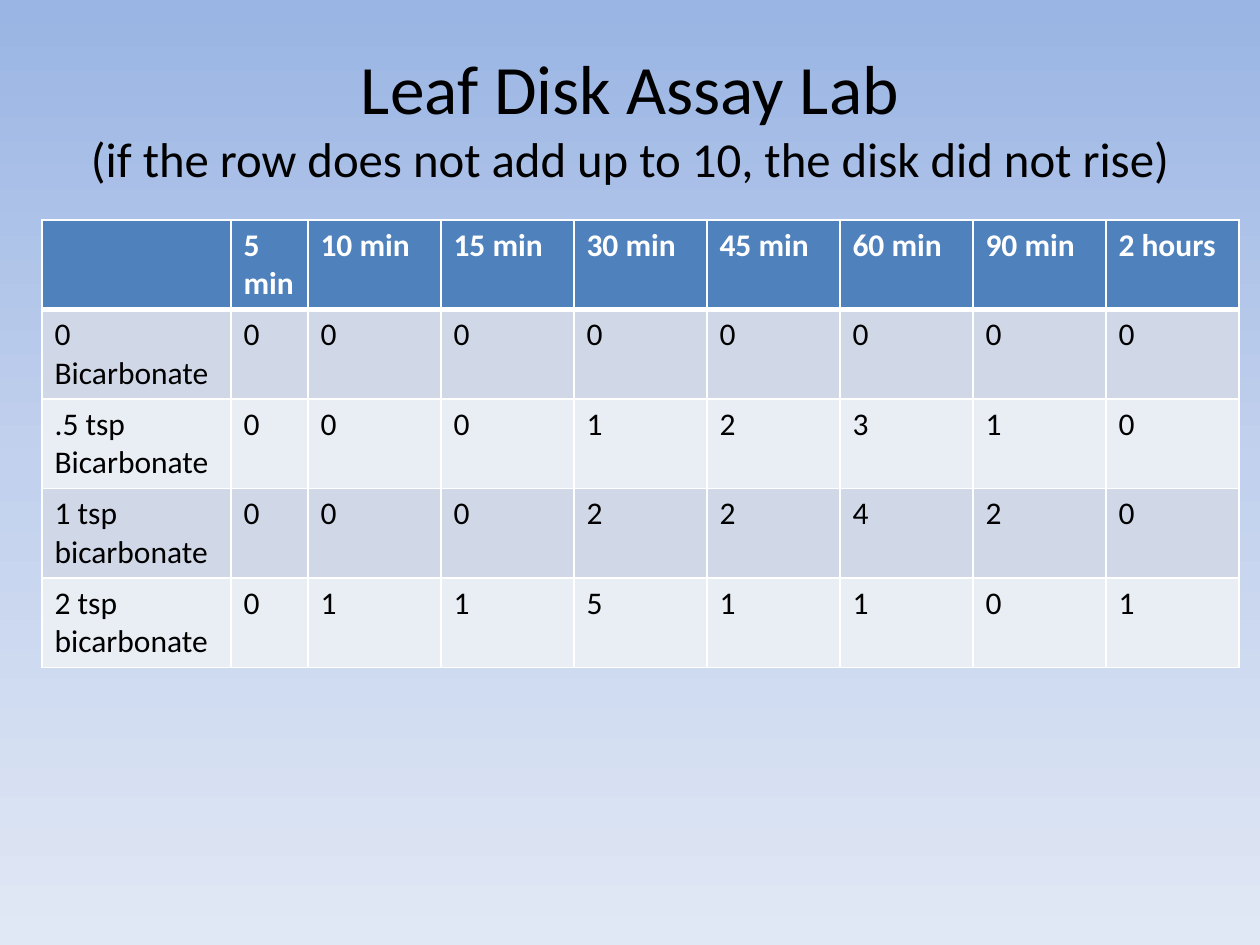
import copy
from typing import NamedTuple

import pptx
import pptx.dml.color
import pptx.enum.text
import pptx.oxml
import pptx.oxml.ns
import pptx.util

PX = 914400 // 126
FONT = "Calibri"
COLORS = {
    "top": "9AB5E4", "middle": "C2D1ED", "bottom": "E1E8F5",
    "head": "4F81BD", "odd": "D0D8E8", "even": "E9EDF4",
    "white": "FFFFFF", "black": "000000",
}


class Box(NamedTuple):
    left: int
    top: int
    width: int
    height: int


class Look(NamedTuple):
    fill: str
    ink: str
    bold: bool
    above: int = 1
    below: int = 1


TITLE = Box(63, 38, 1134, 157)
TABLE = Box(42, 220, 1197, 441)
WIDTHS = [189, 77] + [133] * 7
ROW = 52
TIMES = ["", "5 min", "10 min", "15 min", "30 min", "45 min", "60 min",
         "90 min", "2 hours"]
COUNTS = {
    "0 Bicarbonate": [0, 0, 0, 0, 0, 0, 0, 0],
    ".5 tsp Bicarbonate": [0, 0, 0, 1, 2, 3, 1, 0],
    "1 tsp bicarbonate": [0, 0, 0, 2, 2, 4, 2, 0],
    "2 tsp bicarbonate": [0, 1, 1, 5, 1, 1, 0, 1],
}
LOOKS = [
    Look("head", "white", True, below=3),
    Look("odd", "black", False, above=3),
    Look("even", "black", False),
    Look("odd", "black", False),
    Look("even", "black", False),
]


def rgb(name: str) -> pptx.dml.color.RGBColor:
    return pptx.dml.color.RGBColor.from_string(COLORS[name])


def style(run, size: float, ink: str, bold: bool = False) -> None:
    run.font.name = FONT
    run.font.size = pptx.util.Pt(size)
    run.font.bold = bold
    run.font.color.rgb = rgb(ink)


def paint(slide) -> None:
    """Fill the background with a three-stop vertical gradient."""
    fill = slide.background.fill
    fill.gradient()
    fill.gradient_angle = 270
    stops = slide.background._cSld.find(".//" + pptx.oxml.ns.qn("a:gsLst"))
    stops.insert(1, copy.deepcopy(stops[0]))
    names = ["top", "middle", "bottom"]
    for stop, name, place in zip(fill.gradient_stops, names, [0, 0.5, 1]):
        stop.color.rgb = rgb(name)
        stop.position = place


def edge(cell, side: str, width: int) -> None:
    cell._tc.get_or_add_tcPr().append(pptx.oxml.parse_xml(
        f'<a:ln{side} {pptx.oxml.ns.nsdecls("a")} w="{pptx.util.Pt(width)}">'
        f'<a:solidFill><a:srgbClr val="{COLORS["white"]}"/></a:solidFill>'
        f'</a:ln{side}>'))


def draw_cell(cell, text: str, look: Look) -> None:
    cell.text_frame.text = text
    for run in cell.text_frame.paragraphs[0].runs:
        style(run, 18, look.ink, look.bold)
    for side, width in zip("LRTB", [1, 1, look.above, look.below]):
        edge(cell, side, width)
    cell.fill.solid()
    cell.fill.fore_color.rgb = rgb(look.fill)


def draw_title(shape, box: Box) -> None:
    shape.left, shape.top, shape.width, shape.height = (n * PX for n in box)
    frame = shape.text_frame
    frame.text = ("Leaf Disk Assay Lab\v"
                  "(if the row does not add up to 10, the disk did not rise)")
    frame.word_wrap = True
    frame.auto_size = pptx.enum.text.MSO_AUTO_SIZE.NONE
    frame.vertical_anchor = pptx.enum.text.MSO_ANCHOR.MIDDLE
    line = frame.paragraphs[0]
    line.alignment = pptx.enum.text.PP_ALIGN.CENTER
    for run, size in zip(line.runs, [39.6, 27.9]):
        style(run, size, "black")


def draw_table(slide, box: Box) -> None:
    data = [TIMES] + [[name, *map(str, row)] for name, row in COUNTS.items()]
    frame = slide.shapes.add_table(
        len(data), len(WIDTHS), *(n * PX for n in box))
    table = frame.table
    for col, width in zip(table.columns, WIDTHS):
        col.width = width * PX
    for row, texts, look in zip(table.rows, data, LOOKS):
        row.height = ROW * PX
        for cell, text in zip(row.cells, texts):
            draw_cell(cell, text, look)
    # Rows grow to fit two lines of text
    frame.height = box.height * PX


def main() -> None:
    deck = pptx.Presentation()
    deck.slide_width = pptx.util.Inches(10)
    deck.slide_height = pptx.util.Inches(7.5)
    slide = deck.slides.add_slide(deck.slide_layouts[5])
    paint(slide)
    draw_title(slide.shapes.title, TITLE)
    draw_table(slide, TABLE)
    deck.save("out.pptx")


if __name__ == "__main__":
    main()
